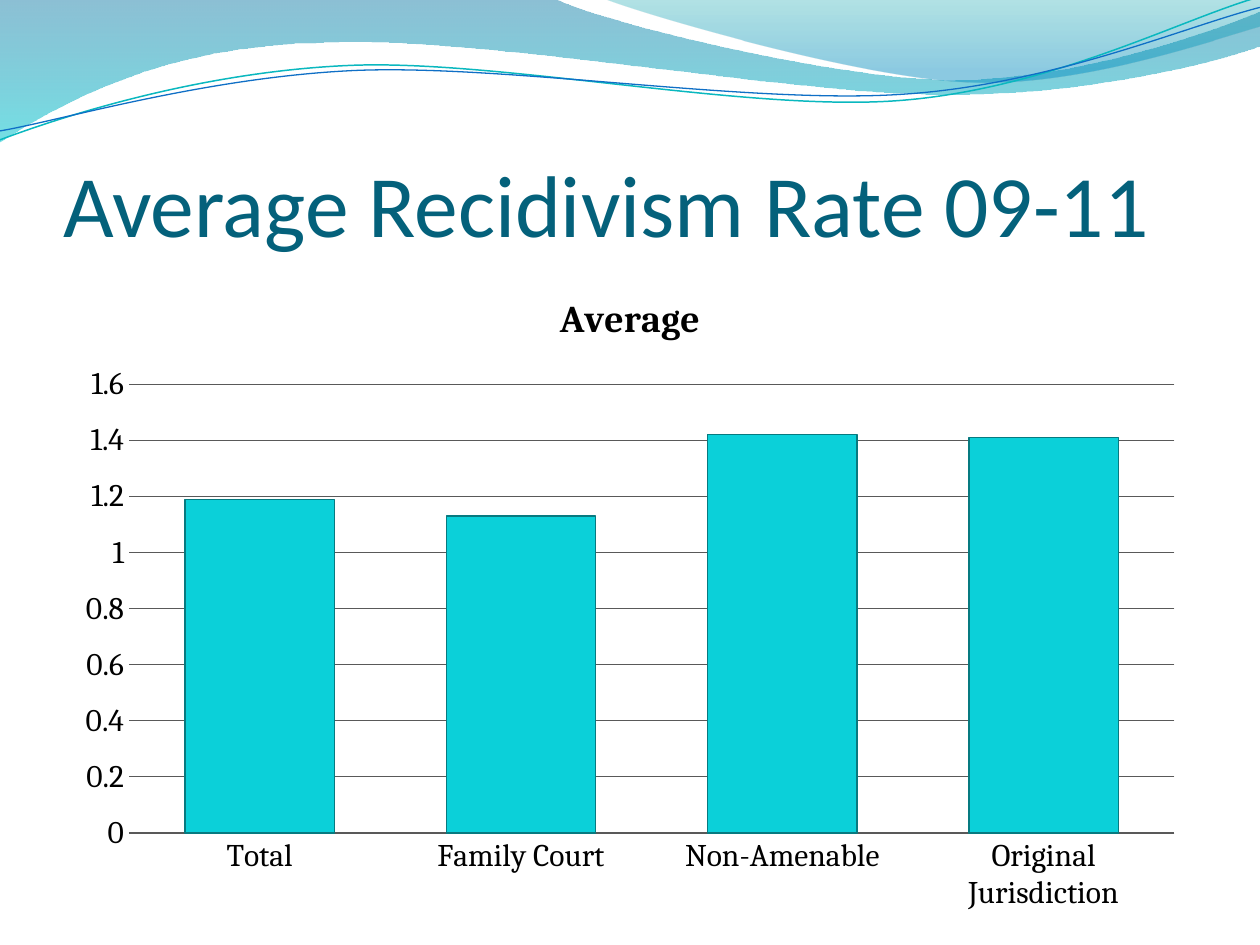
"""Build the average recidivism rate slide with its wave header and column chart."""
from dataclasses import dataclass
from itertools import chain, islice
from typing import Optional

from lxml.etree import Element
from pptx import Presentation
from pptx.chart.data import CategoryChartData
from pptx.dml.color import RGBColor
from pptx.enum.chart import XL_CHART_TYPE as ChartType, XL_TICK_MARK as TickMark
from pptx.enum.text import MSO_ANCHOR as Anchor, MSO_AUTO_SIZE as AutoSize, PP_ALIGN as Align
from pptx.oxml.ns import qn
from pptx.slide import Slide
from pptx.util import Cm, Pt

COLORS = {
    "title": "04617B", "text": "000000", "grid": "595959",
    "bar": "0BD0D9", "bar_edge": "077A80",
    "deep": "0074A1", "aqua": "00C6CF", "teal": "00A1A9", "sky": "008BBF",
    "upper_line": "0AB8BF", "lower_line": "0F6FC6",
}
Point = tuple[float, float]


@dataclass(frozen=True)
class Stop:
    position: float
    color: str
    opacity: int


@dataclass(frozen=True)
class Wave:
    """A start point in cm, then segments of one point (line) or three (curve)."""
    start: Point
    segments: list[list[Point]]
    stops: tuple[Stop, ...] = ()
    line: Optional[str] = None
    width: float = 0


WAVES = [
    Wave((0, -0.03), [
        [(11.18, -0.03)],
        [(12.09, 0.43), (16.87, 1.6), (19.25, 1.6)],
        [(21.67, 1.6), (24.33, 0.66), (25.4, 0.23)],
        [(25.43, 0.91)],
        [(24.97, 1.12), (22.1, 1.93), (18.95, 1.9)],
        [(15.8, 1.9), (9.7, 0.71), (6.53, 0.86)],
        [(3.28, 0.89), (1.17, 2.11), (-0.03, 2.87)],
    ], stops=(Stop(0, "deep", 45), Stop(1, "aqua", 55))),
    Wave((12.17, -0.03), [
        [(12.93, 0.28), (17.32, 1.57), (19.53, 1.65)],
        [(21.74, 1.75), (24.41, 0.81), (25.4, 0.53)],
        [(25.4, 0)],
    ], stops=(Stop(0, "teal", 30), Stop(0.8, "sky", 45))),
    Wave((0, 2.82), [
        [(1.22, 2.36), (4.01, 1.45), (7.04, 1.32)],
        [(10.03, 1.19), (15.06, 2.26), (18.11, 2.03)],
        [(21.16, 1.8), (23.83, 0.38), (25.35, -0.05)],
    ], line="upper_line", width=0.85),
    Wave((0, 2.64), [
        [(1.19, 2.44), (4.17, 1.55), (7.19, 1.42)],
        [(10.24, 1.3), (15.16, 2.11), (18.21, 1.9)],
        [(21.23, 1.7), (23.9, 0.53), (25.4, 0.15)],
    ], line="lower_line", width=0.75),
]
RATES = {"Total": 1.19, "Family Court": 1.13, "Non-Amenable": 1.42, "Original Jurisdiction": 1.41}


def rgb(name: str) -> RGBColor:
    return RGBColor.from_string(COLORS[name])


def draw_wave(slide: Slide, wave: Wave) -> None:
    builder = slide.shapes.build_freeform(*map(Cm, wave.start))
    points = [(Cm(x), Cm(y)) for x, y in chain.from_iterable(wave.segments)]
    builder.add_line_segments(points, close=bool(wave.stops))
    shape = builder.convert_to_shape()
    shape.shadow.inherit = False

    outline = shape.element.find(".//" + qn("a:path"))
    vertices = iter(outline.findall(qn("a:lnTo")))
    for segment in wave.segments:
        controls = list(islice(vertices, len(segment)))
        if len(controls) == 3:
            curve = Element(qn("a:cubicBezTo"))
            controls[0].addprevious(curve)
            for control in controls:
                curve.append(control[0])
                outline.remove(control)

    if wave.stops:
        shape.line.fill.background()
        shape.fill.gradient()
        shape.fill.gradient_angle = 270
        for target, stop in zip(shape.fill.gradient_stops, wave.stops):
            target.position = stop.position
            target.color.rgb = rgb(stop.color)
        tints = shape.element.findall(".//" + qn("a:gs") + "/" + qn("a:srgbClr"))
        for tint, stop in zip(tints, wave.stops):
            alpha = Element(qn("a:alpha"))
            alpha.set("val", str(stop.opacity * 1000))
            tint.append(alpha)
    else:
        shape.fill.background()
        shape.line.color.rgb = rgb(wave.line)
        shape.line.width = Pt(wave.width)


def write_title(slide: Slide) -> None:
    title = slide.shapes.title
    title.left, title.top, title.width, title.height = Cm(1.27), Cm(1.96), Cm(22.86), Cm(3.18)
    frame = title.text_frame
    frame.text = "Average Recidivism Rate 09-11"
    frame.auto_size = AutoSize.NONE
    frame.vertical_anchor = Anchor.BOTTOM
    frame.margin_left = frame.margin_right = frame.margin_bottom = 0
    frame.margin_top = Cm(0.13)
    heading = frame.paragraphs[0]
    heading.alignment = Align.LEFT
    heading.font.name, heading.font.size = "Calibri", Pt(50)
    heading.font.color.rgb = rgb("title")


def draw_chart(slide: Slide) -> None:
    rates = CategoryChartData()
    rates.categories = list(RATES)
    rates.add_series("Average", list(RATES.values()))
    chart = slide.shapes.add_chart(
        ChartType.COLUMN_CLUSTERED, Cm(1.27), Cm(5.38), Cm(22.86), Cm(13.26), rates).chart
    chart.font.name, chart.font.size = "Cambria", Pt(18)
    chart.font.color.rgb = rgb("text")
    chart.has_legend = False
    chart.has_title = True
    chart.chart_title.include_in_layout = False
    caption = chart.chart_title.text_frame
    caption.text = "Average"
    caption_font = caption.paragraphs[0].font
    caption_font.name, caption_font.size, caption_font.bold = "Cambria", Pt(21.6), True
    caption_font.color.rgb = rgb("text")

    courts, scale = chart.category_axis, chart.value_axis
    for axis in (courts, scale):
        axis.major_tick_mark = axis.minor_tick_mark = TickMark.NONE
    scale.minimum_scale, scale.maximum_scale, scale.major_unit = 0, 1.6, 0.2
    scale.has_major_gridlines = True
    scale.format.line.fill.background()
    for rule in (courts.format.line, scale.major_gridlines.format.line):
        rule.color.rgb = rgb("grid")
        rule.width = Pt(0.75)

    plot = chart.plots[0]
    plot.gap_width = 75
    plot.vary_by_categories = False
    bars = plot.series[0].format
    bars.fill.solid()
    bars.fill.fore_color.rgb = rgb("bar")
    bars.line.color.rgb = rgb("bar_edge")
    bars.line.width = Pt(0.75)


def main() -> None:
    deck = Presentation()
    deck.slide_width, deck.slide_height = Cm(25.4), Cm(19.05)
    slide = deck.slides.add_slide(deck.slide_layouts[5])
    for wave in WAVES:
        draw_wave(slide, wave)
    write_title(slide)
    draw_chart(slide)
    deck.save("out.pptx")


if __name__ == "__main__":
    main()
